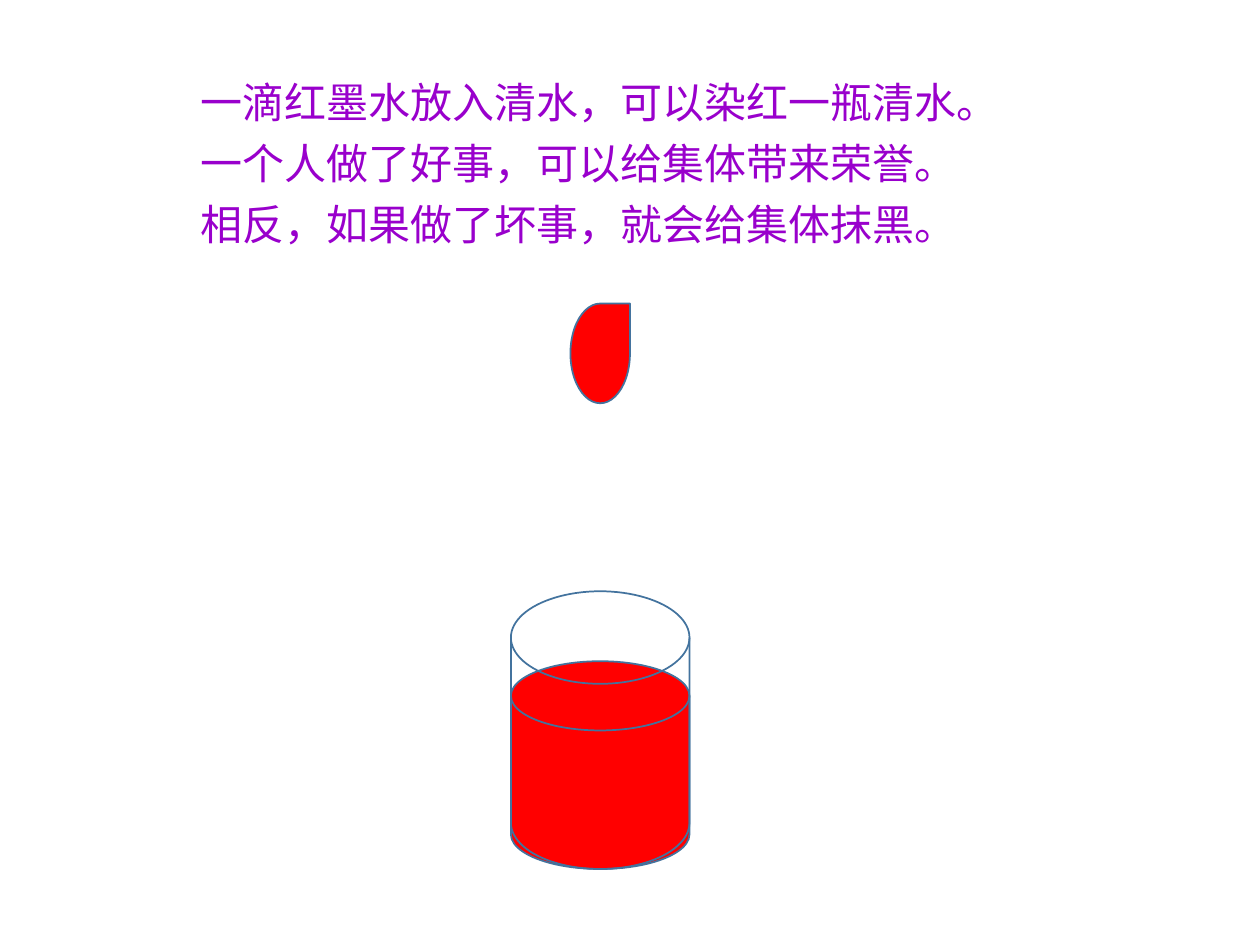
from lxml.etree import SubElement
from pptx import Presentation
from pptx.dml.color import RGBColor
from pptx.enum.shapes import MSO_SHAPE as Shape
from pptx.enum.text import MSO_ANCHOR as Anchor, MSO_AUTO_SIZE as AutoSize
from pptx.oxml.ns import qn
from pptx.util import Cm, Pt

FONT = "Noto Sans CJK SC"
LINES = [
    "一滴红墨水放入清水，可以染红一瓶清水。",
    "一个人做了好事，可以给集体带来荣誉。",
    "相反，如果做了坏事，就会给集体抹黑。",
]


def color(value):
    return RGBColor.from_string(value)


deck = Presentation()
deck.slide_width, deck.slide_height = Cm(25.4), Cm(19.05)
page = deck.slides.add_slide(deck.slide_layouts[1])
title, body = page.placeholders
title.element.getparent().remove(title.element)

# Message
body.left, body.top, body.width, body.height = Cm(3.78), Cm(1.52), Cm(16.84), Cm(5.49)
frame = body.text_frame
frame.text = "\n".join(LINES)
frame.word_wrap = True
frame.auto_size = AutoSize.NONE
frame.vertical_anchor = Anchor.TOP
for index, para in enumerate(frame.paragraphs):
    props = para._p.get_or_add_pPr()
    props.set("marL", "0")
    props.set("indent", "0")
    SubElement(props, qn("a:buNone"))
    para.line_spacing = 0.9
    para.space_before = Pt(9 if index else 0)
    span = para.runs[0]
    span.font.name = FONT
    span.font.size = Pt(24)
    span.font.color.rgb = color("9900CC")
    SubElement(span._r.get_or_add_rPr(), qn("a:ea"), typeface=FONT)

# Ink drop, coloured water and the empty glass around it
SHAPES = [
    (Shape.TEAR, 11.5, 6.12, 1.2, 2.01, "FF0000"),
    (Shape.FLOWCHART_MAGNETIC_DISK, 10.3, 13.33, 3.6, 4.19, "FF0000"),
    (Shape.FLOWCHART_MAGNETIC_DISK, 10.3, 11.92, 3.6, 5.6, None),
]
for kind, left, top, width, height, fill in SHAPES:
    shape = page.shapes.add_shape(kind, Cm(left), Cm(top), Cm(width), Cm(height))
    shape.shadow.inherit = False
    if fill:
        shape.fill.solid()
        shape.fill.fore_color.rgb = color(fill)
    else:
        shape.fill.background()
    shape.line.color.rgb = color("43739E")
    shape.line.width = Pt(1)

deck.save("out.pptx")
